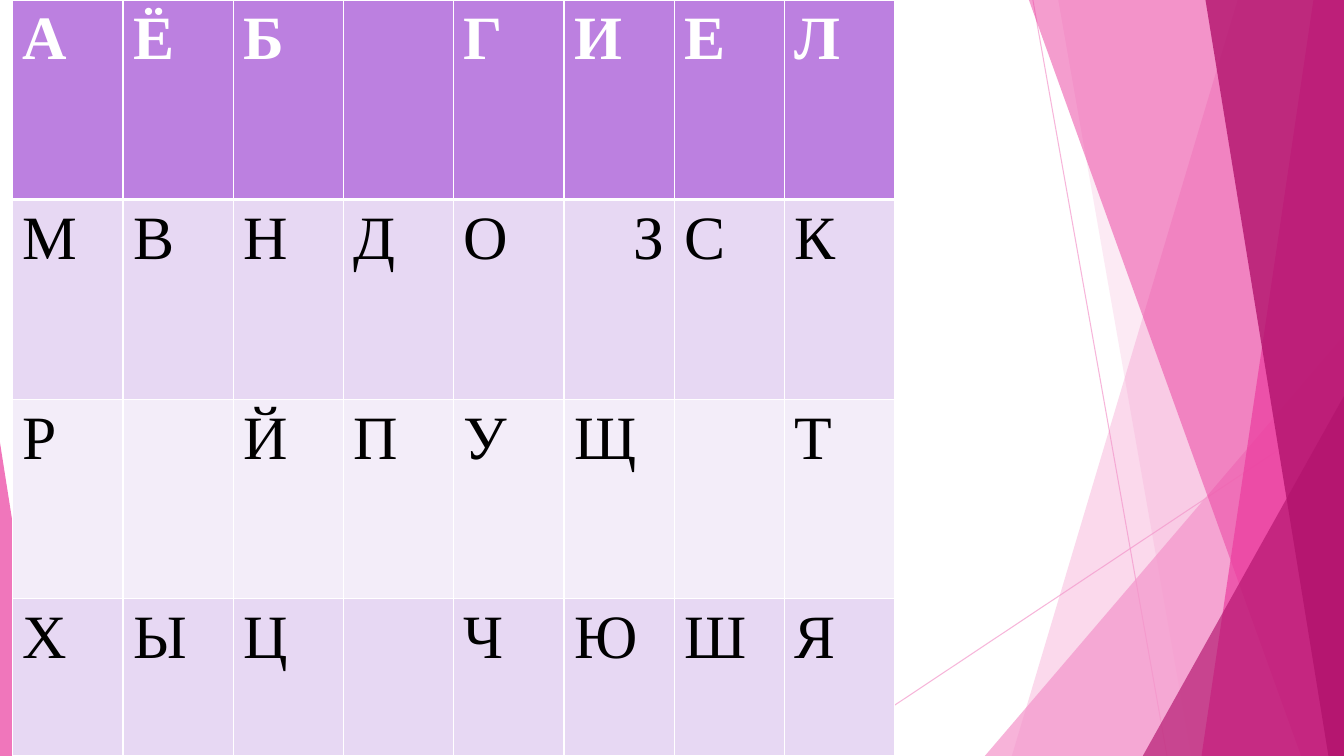
from dataclasses import dataclass

from lxml.etree import SubElement
from pptx import Presentation
from pptx.dml.color import RGBColor
from pptx.enum.shapes import MSO_CONNECTOR, MSO_SHAPE
from pptx.enum.text import PP_ALIGN
from pptx.oxml.ns import qn
from pptx.oxml.xmlchemy import BaseOxmlElement
from pptx.shapes.autoshape import Shape
from pptx.slide import Slide
from pptx.table import _Cell
from pptx.util import Cm, Pt

WHITE = RGBColor(0xFF, 0xFF, 0xFF)
BLACK = RGBColor(0x00, 0x00, 0x00)
LIGHT_PINK = RGBColor(0xF4, 0x96, 0xCB)
PINK = RGBColor(0xEB, 0x3D, 0x9F)
CRIMSON = RGBColor(0xB2, 0x13, 0x6D)
VIOLET = RGBColor(0xBC, 0x80, 0xE0)
LILAC = RGBColor(0xE7, 0xD8, 0xF3)
PALE_LILAC = RGBColor(0xF3, 0xED, 0xF9)

PAGE_WIDTH, PAGE_HEIGHT = 33.87, 19.05


@dataclass(frozen=True)
class Ray:
    """A thin line between two points, in centimetres."""
    start: tuple[float, float]
    end: tuple[float, float]


@dataclass(frozen=True)
class Band:
    """A slanted left edge, filled up to the right side of the page."""
    top_x: float
    bottom_x: float
    color: RGBColor
    opacity: int


@dataclass(frozen=True)
class Wedge:
    """A right triangle standing on the bottom of the page."""
    left: float
    top: float
    width: float
    apex: float
    color: RGBColor
    opacity: int


@dataclass(frozen=True)
class LetterRow:
    letters: str
    height: float
    fill: RGBColor
    color: RGBColor = BLACK
    bold: bool = False
    top_border: float = 1
    bottom_border: float = 1


RAYS = [
    Ray((26.03, 0), (29.41, PAGE_HEIGHT)),
    Ray((PAGE_WIDTH, 10.24), (20.62, PAGE_HEIGHT)),
]

FACETS = [
    Band(31.19, 25.5, LIGHT_PINK, 36),
    Band(26.67, 30.02, LIGHT_PINK, 20),
    Wedge(24.82, 8.46, 9.05, 1, LIGHT_PINK, 72),
    Band(25.93, 32.79, PINK, 50),
    Band(33.1, 30.28, PINK, 70),
    Band(30.38, 33.48, CRIMSON, 80),
    Wedge(28.8, 9.98, 5.07, 1, CRIMSON, 66),
    Wedge(0, 11.15, 1.24, 0, PINK, 70),
]

# A space marks an empty cell.
LETTER_ROWS = [
    LetterRow("АЁБ ГИЕЛ", 5.03, VIOLET, WHITE, bold=True, bottom_border=3),
    LetterRow("МВНДОЗСК", 5.03, LILAC, top_border=3),
    LetterRow("Р ЙПУЩ Т", 5.03, PALE_LILAC),
    LetterRow("ХЫЦ ЧЮШЯ", 3.96, LILAC),
]
RIGHT_ALIGNED = "З"
TABLE_LEFT, COLUMN_WIDTH = 0.32, 2.78


def set_opacity(element: BaseOxmlElement, percent: int) -> None:
    for color in element.iter(qn("a:srgbClr")):
        SubElement(color, qn("a:alpha"), val=str(percent * 1000))


def draw_ray(page: Slide, ray: Ray) -> None:
    line = page.shapes.add_connector(
        MSO_CONNECTOR.STRAIGHT, *map(Cm, ray.start + ray.end))
    line.line.color.rgb = LIGHT_PINK
    line.line.width = Pt(0.75)
    set_opacity(line._element, 70)
    SubElement(line._element.spPr, qn("a:effectLst"))


def add_band(page: Slide, band: Band) -> Shape:
    corners = [(PAGE_WIDTH, 0), (PAGE_WIDTH, PAGE_HEIGHT), (band.bottom_x, PAGE_HEIGHT)]
    outline = page.shapes.build_freeform(Cm(band.top_x), Cm(0))
    outline.add_line_segments([(Cm(x), Cm(y)) for x, y in corners], close=True)
    return outline.convert_to_shape()


def add_wedge(page: Slide, wedge: Wedge) -> Shape:
    triangle = page.shapes.add_shape(
        MSO_SHAPE.ISOSCELES_TRIANGLE, Cm(wedge.left), Cm(wedge.top),
        Cm(wedge.width), Cm(PAGE_HEIGHT - wedge.top))
    triangle.adjustments[0] = wedge.apex
    return triangle


def draw_facet(page: Slide, facet: Band | Wedge) -> None:
    shape = add_band(page, facet) if isinstance(facet, Band) else add_wedge(page, facet)
    shape.shadow.inherit = False
    shape.line.fill.background()
    shape.fill.solid()
    shape.fill.fore_color.rgb = facet.color
    set_opacity(shape._element, facet.opacity)


def set_borders(cell: _Cell, row: LetterRow) -> None:
    properties = cell._tc.get_or_add_tcPr()
    widths = {"lnL": 1, "lnR": 1, "lnT": row.top_border, "lnB": row.bottom_border}
    for side, width in widths.items():
        border = SubElement(properties, qn(f"a:{side}"), w=str(Pt(width)))
        fill = SubElement(border, qn("a:solidFill"))
        SubElement(fill, qn("a:srgbClr"), val=str(WHITE))


def fill_cell(cell: _Cell, letter: str, row: LetterRow) -> None:
    set_borders(cell, row)
    cell.fill.solid()
    cell.fill.fore_color.rgb = row.fill
    if letter == " ":
        return
    para = cell.text_frame.paragraphs[0]
    para.alignment = PP_ALIGN.RIGHT if letter in RIGHT_ALIGNED else PP_ALIGN.LEFT
    span = para.add_run()
    span.text = letter
    span.font.name = "Times New Roman"
    span.font.size = Pt(44)
    span.font.bold = row.bold
    span.font.color.rgb = row.color


def draw_alphabet(page: Slide) -> None:
    column_count = len(LETTER_ROWS[0].letters)
    table = page.shapes.add_table(
        len(LETTER_ROWS), column_count, Cm(TABLE_LEFT), Cm(0),
        Cm(COLUMN_WIDTH * column_count), Cm(PAGE_HEIGHT)).table
    table.first_row = table.horz_banding = False
    for column in table.columns:
        column.width = Cm(COLUMN_WIDTH)
    for row_index, row in enumerate(LETTER_ROWS):
        table.rows[row_index].height = Cm(row.height)
        for column_index, letter in enumerate(row.letters):
            fill_cell(table.cell(row_index, column_index), letter, row)


def main() -> None:
    deck = Presentation()
    deck.slide_width, deck.slide_height = Cm(PAGE_WIDTH), Cm(PAGE_HEIGHT)
    page = deck.slides.add_slide(deck.slide_layouts[6])
    for ray in RAYS:
        draw_ray(page, ray)
    for facet in FACETS:
        draw_facet(page, facet)
    draw_alphabet(page)
    deck.save("out.pptx")


if __name__ == "__main__":
    main()
